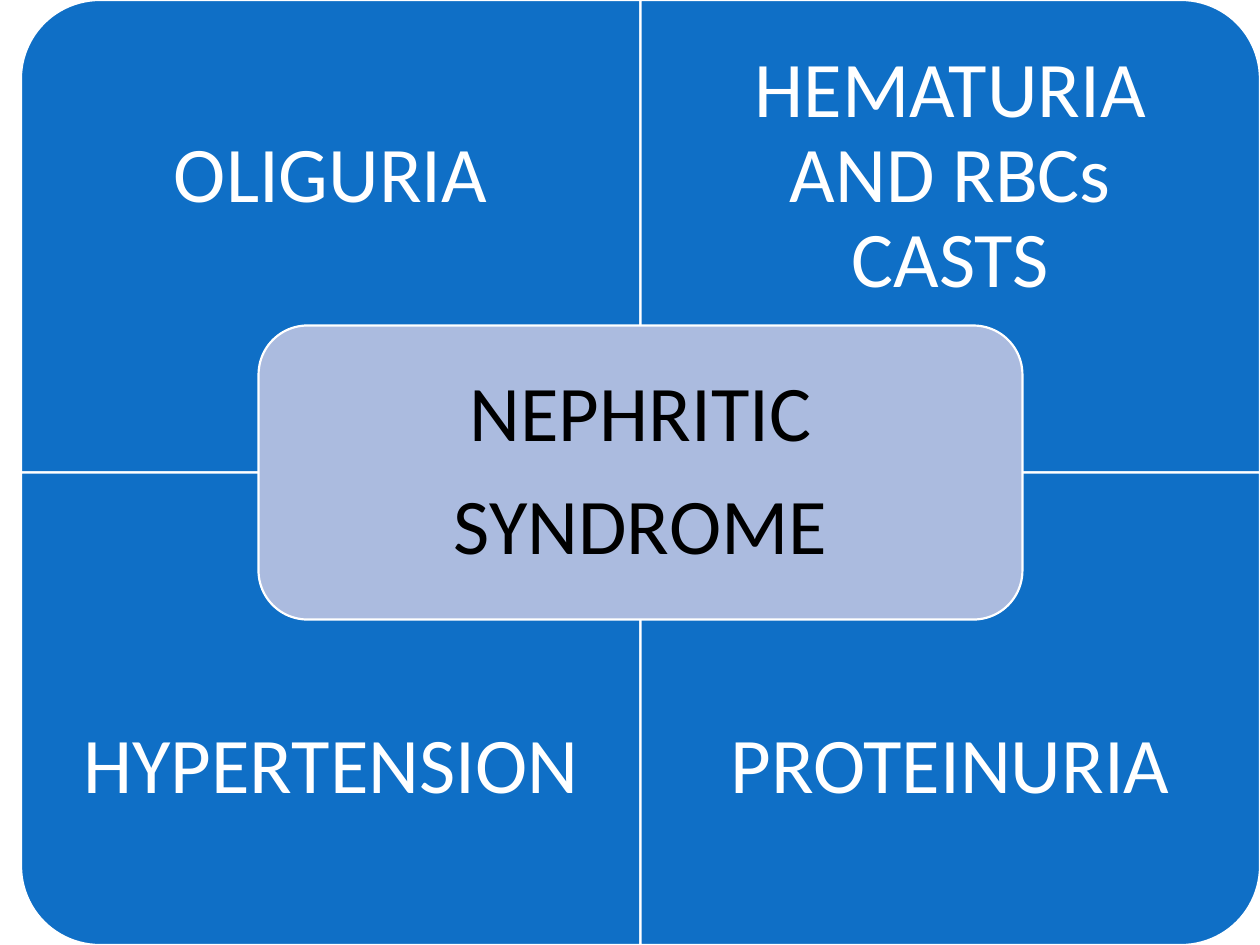
"""Build a title matrix of the four signs of nephritic syndrome."""
from pptx import Presentation
from pptx.dml.color import RGBColor
from pptx.enum.shapes import MSO_SHAPE
from pptx.enum.text import MSO_ANCHOR, PP_ALIGN
from pptx.util import Pt


def add_panel(kind, left, top, width, height, fill):
    shape = slide.shapes.add_shape(kind, Pt(left), Pt(top), Pt(width), Pt(height))
    shape.shadow.inherit = False
    shape.fill.solid()
    shape.fill.fore_color.rgb = RGBColor.from_string(fill)
    shape.line.color.rgb = RGBColor.from_string("FFFFFF")
    shape.line.width = Pt(1.25)
    return shape


def add_label(text, left, top, width, height, inset, color):
    text_frame = slide.shapes.add_textbox(Pt(left), Pt(top), Pt(width), Pt(height)).text_frame
    text_frame.word_wrap = True
    text_frame.vertical_anchor = MSO_ANCHOR.MIDDLE
    text_frame.margin_left = text_frame.margin_right = Pt(inset)
    text_frame.margin_top = text_frame.margin_bottom = Pt(inset)
    text_frame.text = text
    for paragraph in text_frame.paragraphs:
        paragraph.alignment = PP_ALIGN.CENTER
        paragraph.line_spacing = 0.9
        paragraph.space_after = Pt(15.75)
        for run in paragraph.runs:
            run.font.name = "Calibri"
            run.font.size = Pt(45)
            run.font.color.rgb = RGBColor.from_string(color)


presentation = Presentation()
presentation.slide_width = Pt(720)
presentation.slide_height = Pt(540)
slide = presentation.slides.add_slide(presentation.slide_layouts[6])

matrix_left, panel_width, panel_height = 12, 354, 270
label_height = panel_height * 0.75
signs = [
    ("OLIGURIA", 0, 0, 270),
    ("HEMATURIA AND RBCs CASTS", 1, 0, 0),
    ("HYPERTENSION", 0, 1, 180),
    ("PROTEINURIA", 1, 1, 90),
]
for sign, column, row, rotation in signs:
    left = matrix_left + column * panel_width
    top = row * panel_height
    width, height = panel_width, panel_height
    if rotation % 180:
        width, height = height, width
    panel = add_panel(
        MSO_SHAPE.ROUND_1_RECTANGLE,
        left + (panel_width - width) / 2,
        top + (panel_height - height) / 2,
        width, height, "0F6FC6",
    )
    panel.rotation = rotation
    label_top = top + row * (panel_height - label_height)
    add_label(sign, left, label_top, panel_width, label_height, 25.2, "FFFFFF")

add_panel(MSO_SHAPE.ROUNDED_RECTANGLE, 147.75, 186, 436.5, 168, "ABBBDF")
add_label("NEPHRITIC\nSYNDROME", 156, 194, 420, 152, 13.5, "000000")

presentation.save("out.pptx")
